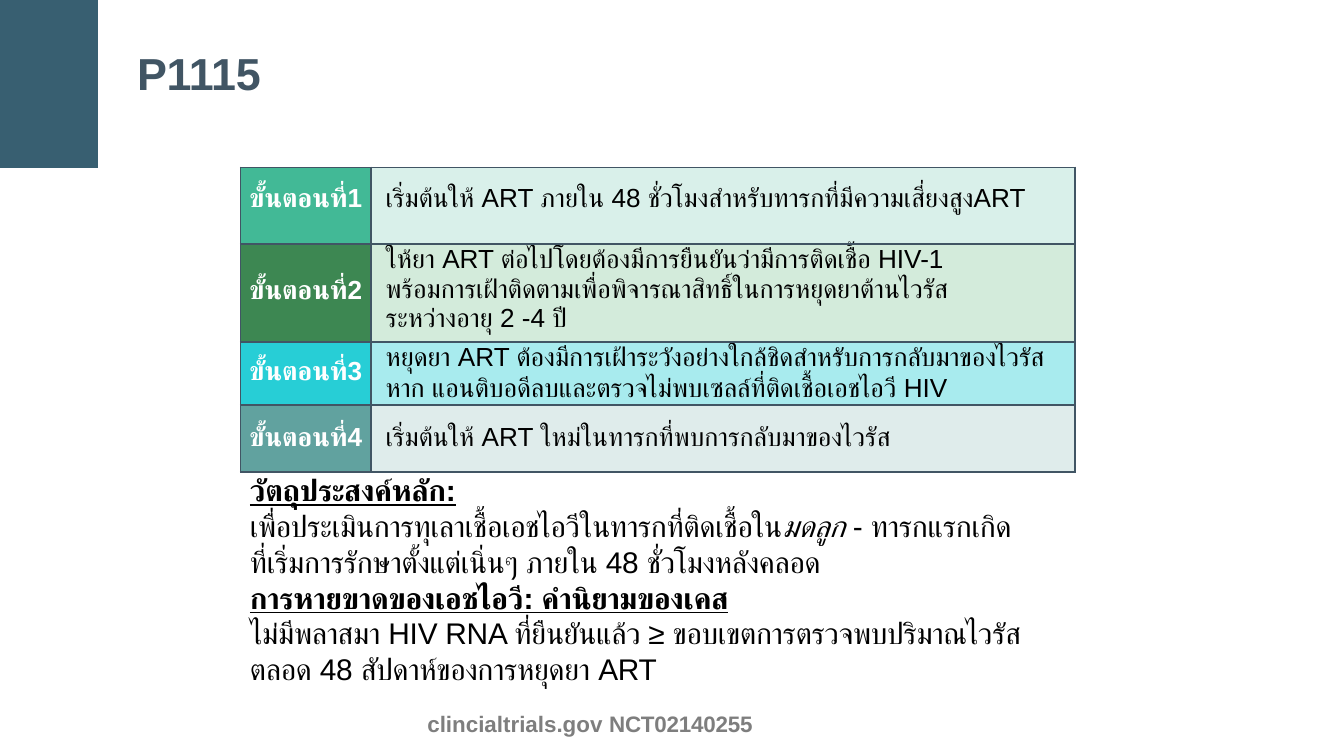
"""Build the P1115 slide: a table of study steps above its objectives."""
from lxml import etree
from pptx import Presentation
from pptx.dml.color import RGBColor
from pptx.enum.shapes import MSO_SHAPE
from pptx.enum.text import MSO_ANCHOR, MSO_AUTO_SIZE, PP_ALIGN
from pptx.oxml.ns import qn
from pptx.util import Inches, Pt

RECTANGLE = MSO_SHAPE.RECTANGLE
TOP = MSO_ANCHOR.TOP
NO_AUTOFIT = MSO_AUTO_SIZE.NONE
LEFT, CENTER = PP_ALIGN.LEFT, PP_ALIGN.CENTER
FONT = "Arial"
COLORS = {
    "accent": "385F71", "title": "415564", "border": "415564",
    "text": "000000", "label": "FFFFFF", "source": "7E7E7E",
}

presentation = Presentation()
presentation.slide_width = Inches(10)
presentation.slide_height = presentation.slide_width * 9 // 16
COLUMN = presentation.slide_width / 100
ROW = presentation.slide_height / 56.25


def grid(left, top, width, height):
    return [round(left * COLUMN), round(top * ROW), round(width * COLUMN), round(height * ROW)]


def add_run(paragraph, text, size, color, tracking=0, **formats):
    run = paragraph.add_run()
    run.text = text
    run.font.color.rgb = RGBColor.from_string(COLORS[color])
    for name, value in {"name": FONT, "size": Pt(size), "bold": False, **formats}.items():
        setattr(run.font, name, value)
    run.font._element.set("spc", str(tracking))
    etree.SubElement(run.font._element, qn("a:cs"), typeface=FONT)


slide = presentation.slides.add_slide(presentation.slide_layouts[5])

block = slide.shapes.add_shape(RECTANGLE, *grid(0, 0, 7.3, 12.5))
block.shadow.inherit = False
block.fill.solid()
block.fill.fore_color.rgb = RGBColor.from_string(COLORS["accent"])
block.line.fill.background()

title = slide.shapes.title
title.left, title.top, title.width, title.height = grid(10.1, 3.3, 9.9, 4.3)
objectives = slide.shapes.add_textbox(*grid(18.5, 35, 60.4, 21.2))
frame_format = {
    "margin_left": Inches(0.01), "margin_top": Inches(0.01), "margin_right": 0,
    "margin_bottom": 0, "vertical_anchor": TOP, "auto_size": NO_AUTOFIT,
}
for shape, wrap in ((title, False), (objectives, True)):
    for name, value in {**frame_format, "word_wrap": wrap}.items():
        setattr(shape.text_frame, name, value)

title_paragraph = title.text_frame.paragraphs[0]
title_paragraph.alignment = LEFT
title_paragraph.space_before = Pt(1)
add_run(title_paragraph, "P1115", 24, "title", -10, bold=True)

steps = [
    {"height": 5.7, "fills": ("42B996", "D9F0EA"), "margins": (0.12, 0.12), "before": (8.8, 8.8),
     "text": "เริ่มต้นให้ ART ภายใน 48 ชั่วโมงสำหรับทารกที่มีความเสี่ยงสูงART"},
    {"height": 7.3, "fills": ("3D8752", "D3EBDB"), "margins": (0.24, 0.01), "before": (0, 0.5),
     "right": 0.8,
     "text": "ให้ยา ART ต่อไปโดยต้องมีการยืนยันว่ามีการติดเชื้อ HIV-1 "
             "พร้อมการเฝ้าติดตามเพื่อพิจารณาสิทธิ์ในการหยุดยาต้านไวรัสระหว่างอายุ 2 -4 ปี"},
    {"height": 4.7, "fills": ("27CED6", "A8EBEE"), "margins": (0.11, 0), "before": (8, 0),
     "spacing": Pt(16.4),
     "text": "หยุดยา ART ต้องมีการเฝ้าระวังอย่างใกล้ชิดสำหรับการกลับมาของไวรัสหาก "
             "แอนติบอดีลบและตรวจไม่พบเซลล์ที่ติดเชื้อเอชไอวี HIV"},
    {"height": 5, "fills": ("61A29F", "DFECEB"), "margins": (0.13, 0.13), "before": (9.1, 9.1),
     "text": "เริ่มต้นให้ ART ใหม่ในทารกที่พบการกลับมาของไวรัส"},
]
column_widths = (9.7, 52.4)
table_height = sum(step["height"] for step in steps)
table = slide.shapes.add_table(
    len(steps), 2, *grid(17.9, 12.45, sum(column_widths), table_height)).table
for column, width in zip(table.columns, column_widths):
    column.width = round(width * COLUMN)

for number, step in enumerate(steps):
    table.rows[number].height = round(step["height"] * ROW)
    texts = (f"ขั้นตอนที่{number + 1}", step["text"])
    for index, text in enumerate(texts):
        is_label = index == 0
        cell = table.cell(number, index)
        cell_format = {
            "margin_left": 0 if is_label else Inches(0.11),
            "margin_right": 0 if is_label else Inches(step.get("right", 0)),
            "margin_top": Inches(step["margins"][index]), "margin_bottom": 0,
            "vertical_anchor": TOP,
        }
        for name, value in cell_format.items():
            setattr(cell, name, value)
        properties = cell._tc.get_or_add_tcPr()
        for side in ("a:lnL", "a:lnR", "a:lnT", "a:lnB"):
            line = etree.SubElement(properties, qn(side), w=str(Pt(1)))
            line_fill = etree.SubElement(line, qn("a:solidFill"))
            etree.SubElement(line_fill, qn("a:srgbClr"), val=COLORS["border"])
        cell.fill.solid()
        cell.fill.fore_color.rgb = RGBColor.from_string(step["fills"][index])
        paragraph = cell.text_frame.paragraphs[0]
        paragraph.alignment = CENTER if is_label else LEFT
        paragraph.space_before = Pt(step["before"][index])
        if not is_label and "spacing" in step:
            paragraph.line_spacing = step["spacing"]
        add_run(paragraph, text, 14, "label" if is_label else "text", bold=is_label)

heading = {"bold": True, "underline": True}
objective_paragraphs = [
    [("วัตถุประสงค์หลัก:", heading)],
    [("เพื่อประเมินการทุเลาเชื้อเอชไอวีในทารกที่ติดเชื้อใน", {}),
     ("มดลูก", {"italic": True}), (" - ทารกแรกเกิด", {})],
    [("ที่เริ่มการรักษาตั้งแต่เนิ่นๆ ภายใน 48 ชั่วโมงหลังคลอด", {})],
    [("การหายขาดของเอชไอวี: คำนิยามของเคส", heading)],
    [("ไม่มีพลาสมา HIV RNA ที่ยืนยันแล้ว ≥ ขอบเขตการตรวจพบปริมาณไวรัส"
      "ตลอด 48 สัปดาห์ของการหยุดยา ART", {})],
]
frame = objectives.text_frame
for number, runs in enumerate(objective_paragraphs):
    paragraph = frame.add_paragraph() if number else frame.paragraphs[0]
    for text, formats in runs:
        add_run(paragraph, text, 16, "text", -10, **formats)
frame.paragraphs[0].space_before = Pt(0.9)

source = frame.add_paragraph()
source.space_before = Pt(12.8)
source._p.get_or_add_pPr().set("marL", str(round(13.2 * COLUMN)))
add_run(source, "clincialtrials.gov ", 12, "source", bold=True)
add_run(source, "NCT02140255", 12, "source", -10, bold=True)

presentation.save("out.pptx")
